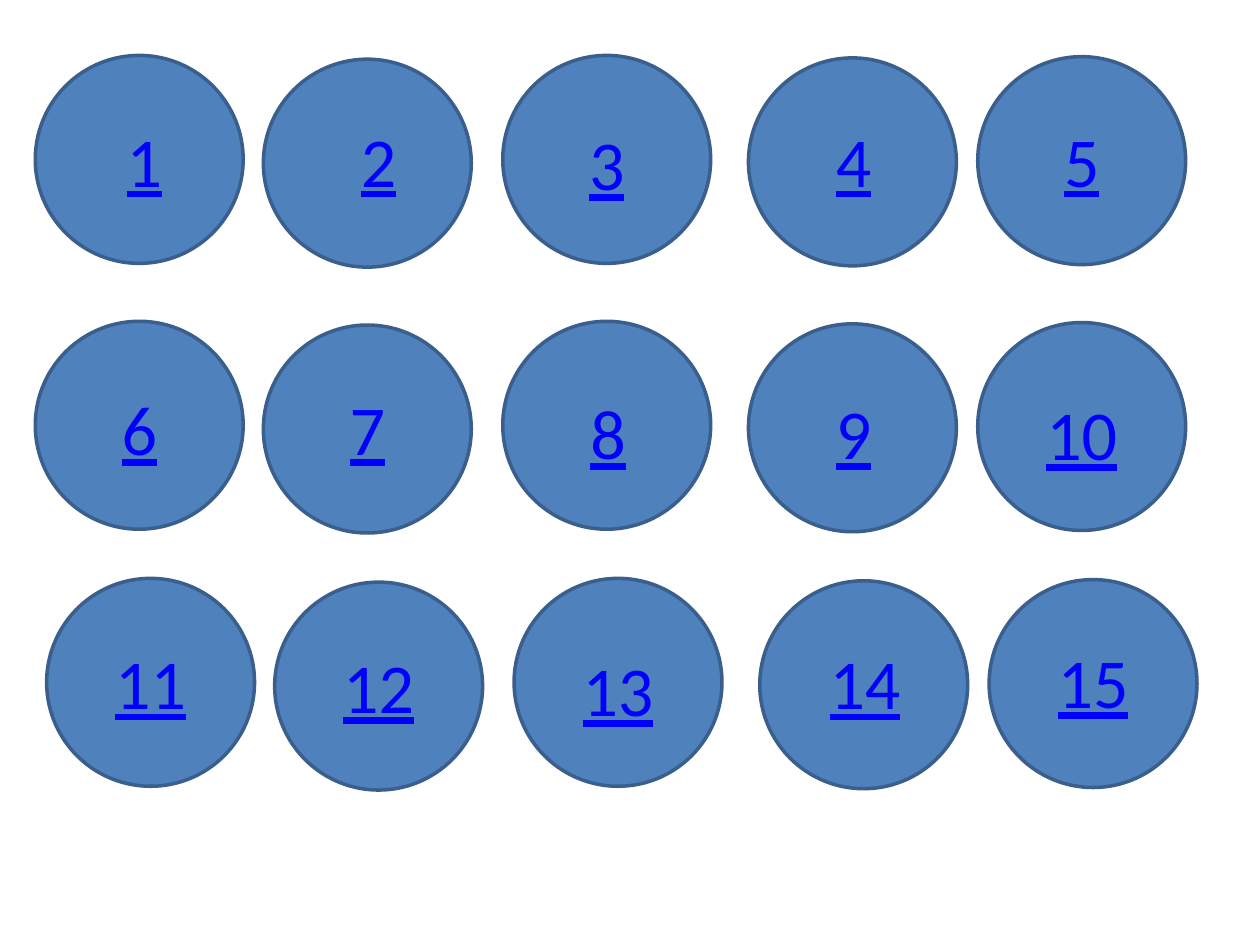
"""Build a slide with a board of fifteen numbered circles."""
from pptx import Presentation
from pptx.dml.color import RGBColor
from pptx.enum import shapes, text
from pptx.util import Inches, Pt

COLORS = {"fill": "4F81BD", "line": "3A5F8C", "number": "0000FF"}
DIAMETER = 1.65
LABEL_W, LABEL_H = 0.79, 0.77

COLUMNS = [(0.28, 0), (2.09, 0.03), (3.99, 0), (5.94, 0.02), (7.76, 0.01)]
ROWS = [(0, 0.44), (0, 2.55), (0.09, 4.59)]
LABELS = [
    (0.75, 0.88), (2.61, 0.88), (4.42, 0.91), (6.38, 0.88), (8.19, 0.88),
    (0.71, 3.01), (2.52, 3.01), (4.43, 3.04), (6.38, 3.04), (8.19, 3.05),
    (0.80, 5.03), (2.61, 5.06), (4.51, 5.08), (6.47, 5.03), (8.28, 5.02),
]


def add_label(s, content, left, top, size=40, font="Calibri", color="number", underline=True):
    sp = s.shapes.add_textbox(Inches(left), Inches(top), Inches(LABEL_W), Inches(LABEL_H))
    tf = sp.text_frame
    tf.word_wrap = True
    tf.auto_size = text.MSO_AUTO_SIZE.SHAPE_TO_FIT_TEXT
    p = tf.paragraphs[0]
    p.alignment = text.PP_ALIGN.CENTER
    r = p.add_run()
    r.text = content
    r.font.name = font
    r.font.size = Pt(size)
    r.font.underline = underline
    r.font.color.rgb = RGBColor.from_string(COLORS[color])


prs = Presentation()
prs.slide_width, prs.slide_height = Inches(10), Inches(7.5)
s = prs.slides.add_slide(prs.slide_layouts[6])

for shift, top in ROWS:
    for left, drop in COLUMNS:
        sp = s.shapes.add_shape(
            shapes.MSO_SHAPE.OVAL, Inches(left + shift), Inches(top + drop),
            Inches(DIAMETER), Inches(DIAMETER))
        sp.shadow.inherit = False
        sp.fill.solid()
        sp.fill.fore_color.rgb = RGBColor.from_string(COLORS["fill"])
        sp.line.color.rgb = RGBColor.from_string(COLORS["line"])
        sp.line.width = Pt(2)

for number, (left, top) in enumerate(LABELS, start=1):
    add_label(s, str(number), left, top)

prs.save("out.pptx")
